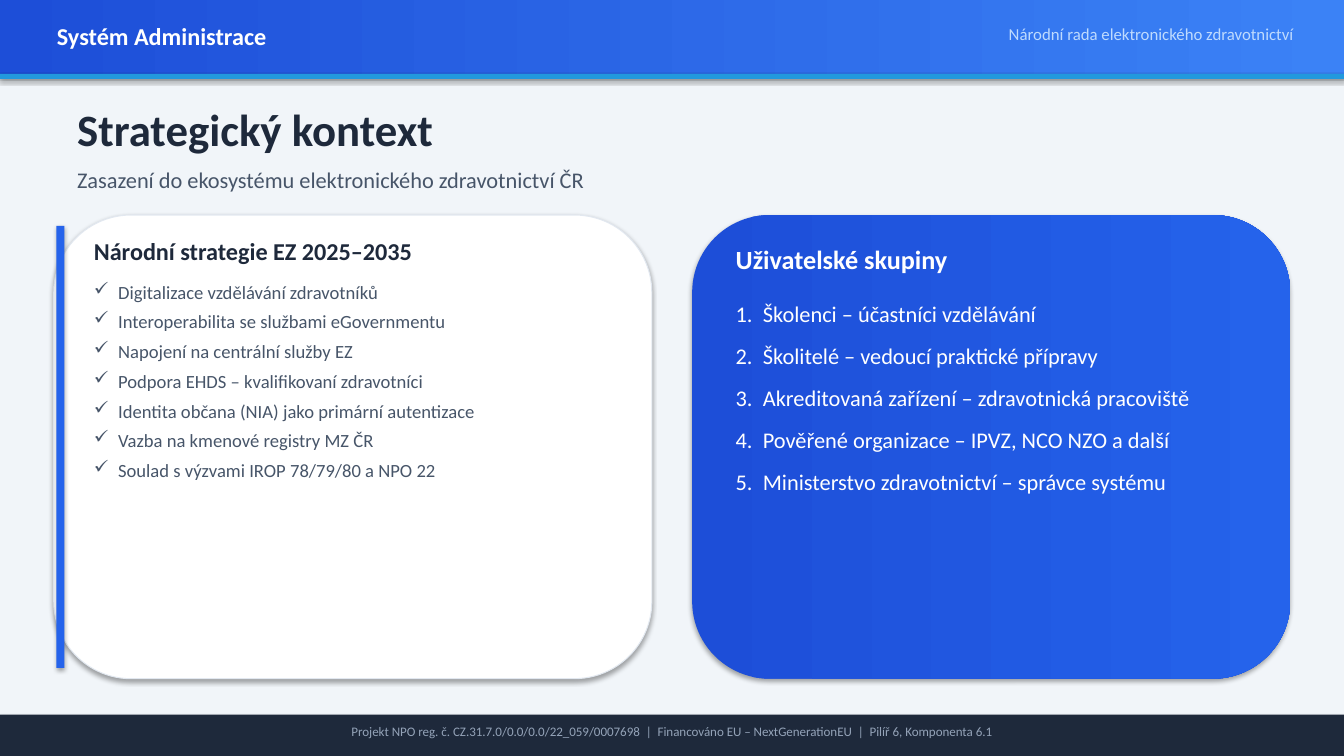
from pptx import Presentation
from pptx.dml.color import RGBColor
from pptx.enum.shapes import MSO_SHAPE as Shape
from pptx.enum.text import MSO_AUTO_SIZE as AutoSize, PP_ALIGN as Align
from pptx.oxml.xmlchemy import OxmlElement
from pptx.util import Inches, Pt

WIDTH, HEIGHT = 13.33, 7.5
COLS, ROWS = 200, 112.5  # square grid cells
CARD_TOP, CARD_W, CARD_H = 32, 89, 69
LEFT_CARD, RIGHT_CARD = 8, 103

FONT = "Calibri"
WHITE = RGBColor(0xFF, 0xFF, 0xFF)
PALE = RGBColor(0xF1, 0xF5, 0xF9)
BORDER = RGBColor(0xE2, 0xE8, 0xF0)
MUTED = RGBColor(0x94, 0xA3, 0xB8)
SLATE = RGBColor(0x47, 0x55, 0x69)
INK = RGBColor(0x1E, 0x29, 0x3B)
DEEP_BLUE = RGBColor(0x1D, 0x4E, 0xD8)
BLUE = RGBColor(0x25, 0x63, 0xEB)
LIGHT_BLUE = RGBColor(0x3B, 0x82, 0xF6)
ICE = RGBColor(0xBF, 0xDB, 0xFE)
CYAN = RGBColor(0x22, 0x99, 0xDD)

STRATEGY = [
    "Digitalizace vzdělávání zdravotníků",
    "Interoperabilita se službami eGovernmentu",
    "Napojení na centrální služby EZ",
    "Podpora EHDS – kvalifikovaní zdravotníci",
    "Identita občana (NIA) jako primární autentizace",
    "Vazba na kmenové registry MZ ČR",
    "Soulad s výzvami IROP 78/79/80 a NPO 22",
]
USER_GROUPS = [
    "Školenci – účastníci vzdělávání",
    "Školitelé – vedoucí praktické přípravy",
    "Akreditovaná zařízení – zdravotnická pracoviště",
    "Pověřené organizace – IPVZ, NCO NZO a další",
    "Ministerstvo zdravotnictví – správce systému",
]
FUNDING = ("Projekt NPO reg. č. CZ.31.7.0/0.0/0.0/22_059/0007698  |  "
           "Financováno EU – NextGenerationEU  |  Pilíř 6, Komponenta 6.1")


def place(col, row, cols, rows):
    x, y = WIDTH / COLS, HEIGHT / ROWS
    return Inches(col * x), Inches(row * y), Inches(cols * x), Inches(rows * y)


def add_panel(slide, cell, *colors, kind=Shape.RECTANGLE, border=None):
    """One colour gives a solid fill, two a left-to-right gradient.
    The theme's soft shadow is kept on purpose."""
    panel = slide.shapes.add_shape(kind, *place(*cell))
    if len(colors) == 1:
        panel.fill.solid()
        panel.fill.fore_color.rgb = colors[0]
    else:
        panel.fill.gradient()
        panel.fill.gradient_angle = 0
        for stop, color, position in zip(panel.fill.gradient_stops, colors, (0, 1)):
            stop.color.rgb = color
            stop.position = position
    if border:
        panel.line.color.rgb = border
        panel.line.width = Pt(0.75)
    else:
        panel.line.fill.background()


def set_bullet(paragraph, tag, indent, **attributes):
    properties = paragraph._p.get_or_add_pPr()
    properties.set("marL", str(Inches(indent)))
    properties.set("indent", str(-Inches(indent)))
    bullet = OxmlElement(tag)
    for key, value in attributes.items():
        bullet.set(key, value)
    properties.append(bullet)


def add_text(slide, cell, *lines, size, color, bold=False, align=Align.LEFT,
             wrap=False, after=None, bullet=None):
    frame = slide.shapes.add_textbox(*place(*cell)).text_frame
    frame.word_wrap = wrap
    frame.auto_size = AutoSize.SHAPE_TO_FIT_TEXT
    for number, line in enumerate(lines):
        paragraph = frame.add_paragraph() if number else frame.paragraphs[0]
        paragraph.alignment = align
        if after:
            paragraph.space_after = Pt(after)
        if bullet:
            set_bullet(paragraph, **bullet)
        run = paragraph.add_run()
        run.text = line
        run.font.name = FONT
        run.font.size = Pt(size)
        run.font.bold = bold
        run.font.color.rgb = color


def add_header(slide):
    add_panel(slide, (0, 0, COLS, 11), DEEP_BLUE, LIGHT_BLUE)
    add_panel(slide, (0, 11, COLS, 0.75), CYAN)
    add_text(slide, (7, 2.4, 34.65, 5.85), "Systém Administrace",
             size=17.3, color=WHITE, bold=True)
    add_text(slide, (148.25, 2.85, 45.75, 4.5),
             "Národní rada elektronického zdravotnictví",
             size=12, color=ICE, align=Align.RIGHT)


def add_titles(slide):
    add_text(slide, (10, 14.4, 56.55, 9.6), "Strategický kontext",
             size=32, color=INK, bold=True)
    add_text(slide, (10, 24, 79.35, 5.55),
             "Zasazení do ekosystému elektronického zdravotnictví ČR",
             size=16, color=SLATE)


def add_strategy_card(slide):
    add_panel(slide, (LEFT_CARD, CARD_TOP, CARD_W, CARD_H), WHITE,
              kind=Shape.ROUNDED_RECTANGLE, border=BORDER)
    add_panel(slide, (LEFT_CARD + 0.4, CARD_TOP + 1.6, 1.2, CARD_H - 3.2), BLUE)
    add_text(slide, (12.5, 34.35, 50.85, 5.85), "Národní strategie EZ 2025–2035",
             size=17.3, color=INK, bold=True)
    add_text(slide, (12.5, 41, 82, 31.35), *STRATEGY,
             size=13.3, color=SLATE, wrap=True, after=5.3,
             bullet=dict(tag="a:buChar", indent=0.24, char="✓"))


def add_groups_card(slide):
    add_panel(slide, (RIGHT_CARD, CARD_TOP, CARD_W, CARD_H), DEEP_BLUE, BLUE,
              kind=Shape.ROUNDED_RECTANGLE)
    add_text(slide, (108, 35.5, 34.8, 6.3), "Uživatelské skupiny",
             size=18.7, color=WHITE, bold=True)
    add_text(slide, (108, 44, 78, 30.9), *USER_GROUPS,
             size=16, color=WHITE, wrap=True, after=10.7,
             bullet=dict(tag="a:buAutoNum", indent=0.27, type="arabicPeriod"))


def add_footer(slide):
    add_panel(slide, (0, 106.35, COLS, 6.15), INK)
    add_text(slide, (49.65, 107, 100.65, 3.9), FUNDING,
             size=9.3, color=MUTED, align=Align.CENTER)


def main():
    deck = Presentation()
    deck.slide_width, deck.slide_height = Inches(WIDTH), Inches(HEIGHT)
    slide = deck.slides.add_slide(deck.slide_layouts[6])
    add_panel(slide, (0, 0, COLS, ROWS), PALE)  # page background
    add_header(slide)
    add_titles(slide)
    add_strategy_card(slide)
    add_groups_card(slide)
    add_footer(slide)
    deck.save("out.pptx")


if __name__ == "__main__":
    main()
